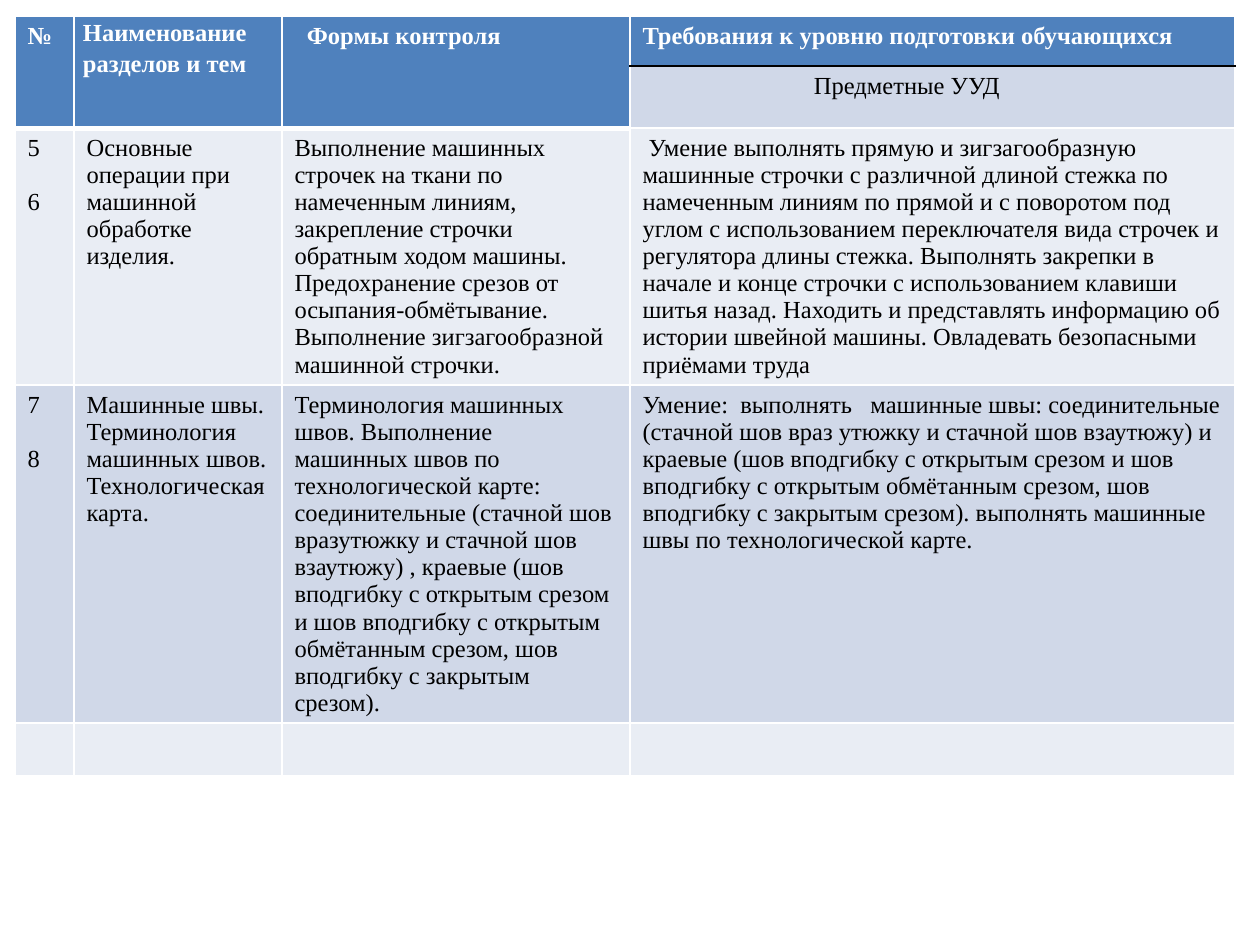
from lxml.etree import SubElement
from pptx import Presentation
from pptx.dml.color import RGBColor
from pptx.oxml.ns import qn
from pptx.util import Pt

PX = 914400 // 126
FONT = "Times New Roman"
WHITE = RGBColor(0xFF, 0xFF, 0xFF)
BLACK = RGBColor(0, 0, 0)
BLUE = RGBColor(0x4F, 0x81, 0xBD)
BAND_DARK = RGBColor(0xD0, 0xD8, 0xE8)
BAND_LIGHT = RGBColor(0xE9, 0xED, 0xF4)

HEADINGS = ["№", "Наименование разделов и тем", "Формы контроля",
            "Требования к уровню подготовки обучающихся"]
SUBHEADING = "Предметные УУД"
LESSONS = [
    (["5", "6"],
     "Основные операции при машинной обработке изделия.",
     "Выполнение машинных строчек на ткани по намеченным линиям, закрепление "
     "строчки обратным ходом машины. Предохранение срезов от "
     "осыпания-обмётывание. Выполнение зигзагообразной машинной строчки.",
     " Умение выполнять прямую и зигзагообразную машинные строчки с различной "
     "длиной стежка по намеченным линиям по прямой и с поворотом под углом с "
     "использованием переключателя вида строчек и регулятора длины стежка. "
     "Выполнять закрепки в начале и конце строчки с использованием клавиши "
     "шитья назад. Находить и представлять информацию об истории швейной "
     "машины. Овладевать безопасными приёмами труда"),
    (["7", "8"],
     "Машинные швы. Терминология машинных швов. Технологическая карта.",
     "Терминология машинных швов. Выполнение  машинных швов по "
     "технологической карте: соединительные (стачной шов вразутюжку и стачной "
     "шов взаутюжу) , краевые (шов вподгибку с открытым срезом и шов "
     "вподгибку с открытым обмётанным срезом, шов вподгибку с закрытым "
     "срезом).",
     "Умение:  выполнять   машинные швы: соединительные (стачной шов враз "
     "утюжку и стачной шов взаутюжу) и краевые (шов вподгибку с открытым "
     "срезом и шов вподгибку с открытым обмётанным срезом, шов вподгибку с "
     "закрытым срезом). выполнять машинные швы по технологической карте."),
    ("", "", "", ""),
]

LEFT, TOP = 15, 16
COLUMN_WIDTHS = [59, 208, 348, 605]
ROW_HEIGHTS = [50, 62, 257, 338, 53]
MERGED_COLUMNS = 3
LINE_GAP = Pt(15.5)  # one line of 14 pt text

# (row, column): cell margins in px
MARGINS = {
    (0, 1): {"margin_left": 9, "margin_right": 9, "margin_top": 0, "margin_bottom": 0},
    (0, 2): {"margin_left": 25},
    (1, 3): {"margin_left": 184},
}


def set_borders(cell, **special):
    """White 1 pt on every side, except sides given as (colour, points)."""
    properties = cell._tc.get_or_add_tcPr()
    for side in ("L", "R", "T", "B"):
        colour, points = special.get(side, (WHITE, 1))
        line = SubElement(properties, qn(f"a:ln{side}"), w=str(Pt(points)))
        SubElement(SubElement(line, qn("a:solidFill")), qn("a:srgbClr"), val=str(colour))


def write(cell, content, colour=BLACK, bold=False):
    lines = content if isinstance(content, list) else [content]
    frame = cell.text_frame
    for index, text in enumerate(lines):
        paragraph = frame.add_paragraph() if index else frame.paragraphs[0]
        if index:
            paragraph.space_before = LINE_GAP
        if not text:
            continue
        run = paragraph.add_run()
        run.text = text
        run.font.color.rgb = colour
        for name, value in {"name": FONT, "size": Pt(14), "bold": bold}.items():
            setattr(run.font, name, value)


def paint(cell, colour):
    cell.fill.solid()
    cell.fill.fore_color.rgb = colour


def main():
    deck = Presentation()
    deck.slide_width, deck.slide_height = 1260 * PX, 945 * PX
    slide = deck.slides.add_slide(deck.slide_layouts[6])
    plan = slide.shapes.add_table(
        len(ROW_HEIGHTS), len(COLUMN_WIDTHS), LEFT * PX, TOP * PX,
        sum(COLUMN_WIDTHS) * PX, sum(ROW_HEIGHTS) * PX).table
    for column, width in zip(plan.columns, COLUMN_WIDTHS):
        column.width = width * PX
    for row, height in zip(plan.rows, ROW_HEIGHTS):
        row.height = height * PX

    for column, heading in enumerate(HEADINGS):
        top, below = plan.cell(0, column), plan.cell(1, column)
        if column < MERGED_COLUMNS:
            top.merge(below)
            set_borders(top, B=(WHITE, 3))
            set_borders(below, B=(WHITE, 3))
            paint(below, BLUE)
        else:
            set_borders(top, B=(BLACK, 1))
            set_borders(below, T=(BLACK, 1))
            paint(below, BAND_DARK)
            write(below, SUBHEADING)
        paint(top, BLUE)
        write(top, heading, WHITE, True)

    for row, lesson in enumerate(LESSONS, start=2):
        for column, content in enumerate(lesson):
            cell = plan.cell(row, column)
            set_borders(cell)
            paint(cell, BAND_DARK if row % 2 else BAND_LIGHT)
            write(cell, content)

    for position, margins in MARGINS.items():
        for name, value in margins.items():
            setattr(plan.cell(*position), name, value * PX)
    topic_heading = plan.cell(0, 1).text_frame.paragraphs[0]
    topic_heading.line_spacing = 1.15
    topic_heading.space_after = Pt(10)

    deck.save("out.pptx")


if __name__ == "__main__":
    main()
